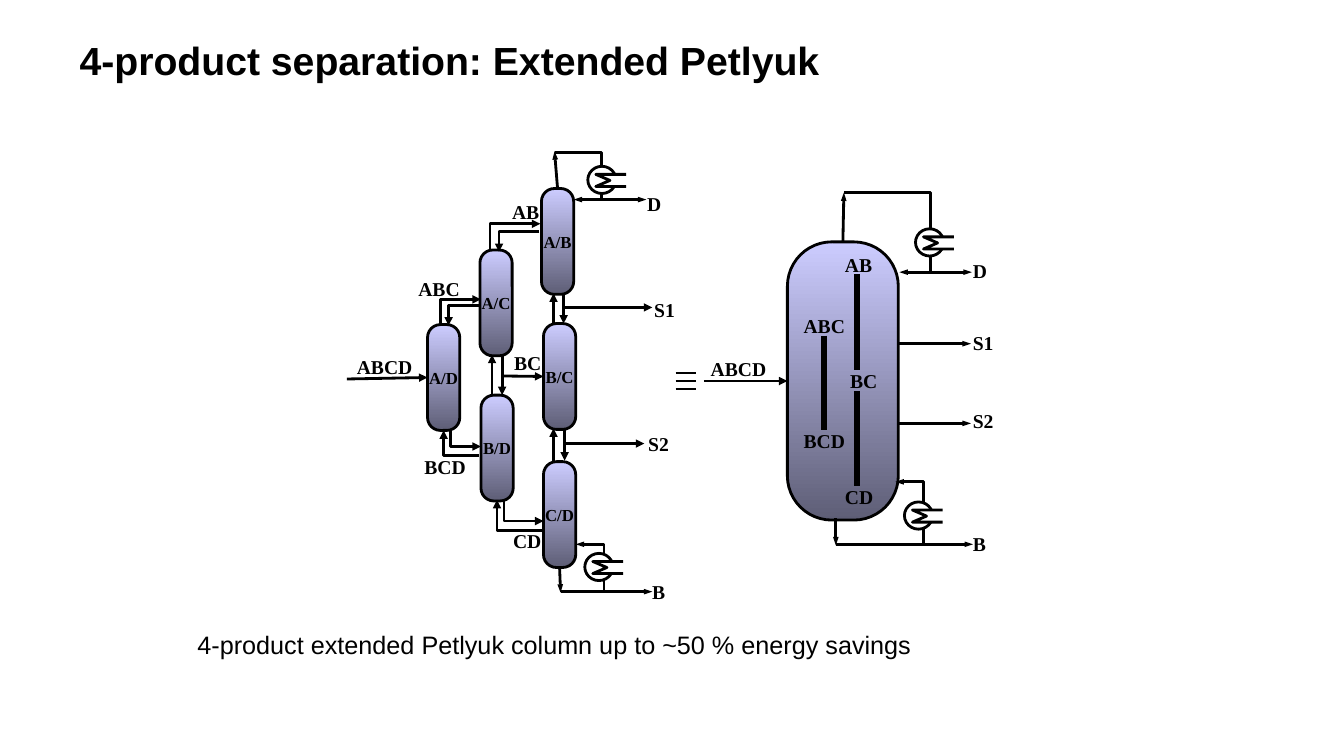
"""Build the slide on the extended Petlyuk column for four products."""
from lxml import etree
from pptx import Presentation
from pptx import util as u
from pptx.dml import color
from pptx.enum import shapes, text
from pptx.oxml import ns

COLORS = {"ink": "000000", "paper": "FFFFFF", "top": "CCCCFF", "bottom": "5E5E76"}
SERIF, SANS = "Times New Roman", "Arial"
COLUMN_SIZE = (0.32, 1.05)

COLUMNS = {
    "A/B": (5.37, 1.87), "B/C": (5.39, 3.21), "C/D": (5.39, 4.58),
    "A/C": (4.76, 2.48), "B/D": (4.77, 3.92), "A/D": (4.24, 3.22),
}
LABELS = [
    ("ABCD", 3.44, 3.47), ("ABC", 4.05, 2.7), ("BCD", 4.11, 4.46),
    ("AB", 4.98, 1.93), ("BC", 5, 3.43), ("CD", 4.99, 5.2),
    ("D", 6.32, 1.85), ("S1", 6.39, 2.91), ("S2", 6.33, 4.24), ("B", 6.37, 5.7),
    ("ABCD", 6.95, 3.49), ("D", 9.55, 2.52), ("S1", 9.55, 3.23),
    ("S2", 9.55, 4.01), ("B", 9.55, 5.23),
]
WALL_LABELS = [
    ("ABC", 7.85, 3.07), ("BCD", 7.85, 4.21), ("AB", 8.12, 2.46),
    ("CD", 8.13, 4.76), ("BC", 8.17, 3.61),
]
ELBOWS = [
    ((4.77, 2.97), (4.37, 3.22), "head"), ((4.75, 3.03), (4.45, 3.23), "tail"),
    ((4.77, 4.43), (4.47, 4.28), "head"), ((4.75, 4.52), (4.4, 4.27), "tail"),
    ((5.36, 2.22), (4.86, 2.47), "head"), ((5.35, 2.3), (4.95, 2.5), "tail"),
    ((5.39, 5.17), (5, 4.97), "head"), ((5.39, 5.26), (4.93, 4.96), "tail"),
]
EXCHANGES = [(4.88, 4.98, 3.52, 3.92), (5.49, 5.59, 2.91, 3.21), (5.49, 5.6, 4.25, 4.57)]
SIDE_DRAWS = [((5.59, 3.05), (6.47, 3.05)), ((5.59, 4.4), (6.39, 4.4))]
WALLS = [(8.17, 3.33, 4.27), (8.5, 3.88, 4.82), (8.5, 2.72, 3.67)]


def rgb(name):
    """Return the named colour."""
    return color.RGBColor.from_string(COLORS[name])


def style_line(shape, arrows=(), width=2, slim=False):
    """Give a black outline with triangles at the listed ends."""
    shape.line.color.rgb = rgb("ink")
    shape.line.width = u.Pt(width)
    line = shape.line._get_or_add_ln()
    for end in ("head", "tail"):
        if end in arrows:
            arrow = etree.SubElement(line, ns.qn(f"a:{end}End"), type="triangle")
            if slim:
                arrow.set("w", "sm")


def add_line(group, start, end, arrows=("tail",), width=2, slim=False,
             kind=shapes.MSO_CONNECTOR.STRAIGHT):
    """Add a connector between two points."""
    points = [u.Inches(value) for value in (*start, *end)]
    connector = group.shapes.add_connector(kind, *points)
    style_line(connector, arrows, width, slim)
    etree.SubElement(connector._element.spPr, ns.qn("a:effectLst"))
    return connector


def add_elbow(group, start, end, arrow):
    """Add a one-bend connector that leaves its start horizontally."""
    connector = add_line(group, start, end, (arrow,), kind=shapes.MSO_CONNECTOR.ELBOW)
    geometry = connector._element.spPr.find(ns.qn("a:prstGeom"))
    geometry.set("prst", "bentConnector2")


def add_polyline(group, points, arrows=(), filled=False):
    """Add an open outline through the points."""
    corners = [(u.Inches(x), u.Inches(y)) for x, y in points]
    builder = group.shapes.build_freeform(*corners[0])
    builder.add_line_segments(corners[1:], close=False)
    shape = builder.convert_to_shape()
    shape.shadow.inherit = False
    if filled:
        shape.fill.solid()
        shape.fill.fore_color.rgb = rgb("paper")
    else:
        shape.fill.background()
    style_line(shape, arrows, slim=True)


def add_run(paragraph, words, size, font=SERIF, bold=True):
    """Add one styled run."""
    run = paragraph.add_run()
    run.text = words
    run.font.size = u.Pt(size)
    run.font.name = font
    run.font.bold = bold
    run.font.color.rgb = rgb("ink")


def add_label(parent, words, x, y, width=0.79, height=0.33, size=14,
              font=SERIF, bold=True, align=text.PP_ALIGN.LEFT):
    """Add a text box and return its frame."""
    box = parent.shapes.add_textbox(*map(u.Inches, (x, y, width, height)))
    frame = box.text_frame
    frame.word_wrap = True
    frame.paragraphs[0].alignment = align
    add_run(frame.paragraphs[0], words, size, font, bold)
    return frame


def add_column(group, x, y, width, height, words=""):
    """Add a shaded column with an optional name."""
    shape = group.shapes.add_shape(
        shapes.MSO_SHAPE.ROUNDED_RECTANGLE, *map(u.Inches, (x, y, width, height)))
    shape.adjustments[0] = 0.4
    shape.shadow.inherit = False
    shape.fill.gradient()
    shape.fill.gradient_angle = 270
    for stop, name in zip(shape.fill.gradient_stops, ("top", "bottom")):
        stop.color.rgb = rgb(name)
    style_line(shape)
    if words:
        frame = shape.text_frame
        frame.word_wrap = False
        frame.vertical_anchor = text.MSO_ANCHOR.MIDDLE
        frame.paragraphs[0].alignment = text.PP_ALIGN.CENTER
        add_run(frame.paragraphs[0], words, 12)
    return shape


def add_exchanger(group, x, y):
    """Add a heat exchanger: a circle with a coil."""
    circle = group.shapes.add_shape(
        shapes.MSO_SHAPE.OVAL, *map(u.Inches, (x, y, 0.28, 0.27)))
    circle.shadow.inherit = False
    circle.fill.solid()
    circle.fill.fore_color.rgb = rgb("paper")
    style_line(circle)
    coil = [(0.38, 0.2), (0.08, 0.2), (0.22, 0.14), (0.08, 0.08), (0.38, 0.08)]
    add_polyline(group, [(x + dx, y + dy) for dx, dy in coil], filled=True)


def add_sequence(group):
    """Add the arrangement of six linked columns."""
    columns = {name: add_column(group, *place, *COLUMN_SIZE, name)
               for name, place in COLUMNS.items()}
    for start, end, arrow in ELBOWS:
        add_elbow(group, start, end, arrow)
    for up, down, top, bottom in EXCHANGES:
        add_line(group, (up, top), (up, bottom), ("head",))
        add_line(group, (down, top), (down, bottom))
    for start, end in SIDE_DRAWS:
        add_line(group, start, end)
    add_line(group, (3.44, 3.76), (4.24, 3.76)).end_connect(columns["A/D"], 1)
    add_line(group, (4.98, 3.73), (5.39, 3.73)).end_connect(columns["B/C"], 1)

    add_line(group, (5.53, 1.87), (5.5, 1.5), slim=True).begin_connect(columns["A/B"], 0)
    add_polyline(group, [(5.5, 1.51), (5.97, 1.51), (5.97, 1.98)])
    add_line(group, (5.69, 1.98), (6.41, 1.98), ("head", "tail"), slim=True)
    add_exchanger(group, 5.83, 1.65)

    add_line(group, (5.55, 5.63), (5.56, 5.88), slim=True).begin_connect(columns["C/D"], 2)
    add_line(group, (5.56, 5.87), (6.47, 5.87), slim=True)
    add_polyline(group, [(5.99, 5.86), (5.99, 5.4), (5.71, 5.4)], ("tail",))
    add_exchanger(group, 5.8, 5.49)


def add_vessel(group):
    """Add the equivalent single vessel with dividing walls."""
    vessel = add_column(group, 7.81, 2.4, 1.1, 2.76)
    add_line(group, (6.98, 3.78), (7.81, 3.78)).end_connect(vessel, 1)
    for x, top, bottom in WALLS:
        add_line(group, (x, top), (x, bottom), (), 4)
    for y in (3.41, 4.2):
        add_line(group, (8.91, y), (9.63, y), slim=True)

    add_line(group, (8.36, 2.4), (8.37, 1.91), slim=True).begin_connect(vessel, 0)
    add_polyline(group, [(8.37, 1.91), (9.23, 1.91), (9.23, 2.7)])
    add_line(group, (8.92, 2.7), (9.64, 2.7), ("head", "tail"), slim=True)
    add_exchanger(group, 9.08, 2.27)

    add_line(group, (8.29, 5.14), (8.29, 5.41), slim=True)
    add_line(group, (8.29, 5.4), (9.65, 5.4), slim=True)
    add_polyline(group, [(9.16, 5.39), (9.16, 4.78), (8.88, 4.78)], ("tail",))
    add_exchanger(group, 8.97, 4.98)


def main():
    """Build and save the slide."""
    presentation = Presentation()
    presentation.slide_width = u.Inches(13.33)
    presentation.slide_height = u.Inches(7.5)
    slide = presentation.slides.add_slide(presentation.slide_layouts[6])

    title = add_label(slide, "4-product separation: Extended Petlyuk",
                      0.79, 0.36, 11.33, 0.47, 28, SANS)
    title.margin_left = title.margin_right = title.margin_top = title.margin_bottom = 0
    title.vertical_anchor = text.MSO_ANCHOR.MIDDLE

    group = slide.shapes.add_group_shape()
    add_sequence(group)
    add_vessel(group)
    for row in range(3):
        y = 3.7 + 0.08 * row
        add_line(group, (6.7, y), (6.9, y), ())
    for words, x, y in LABELS:
        add_label(group, words, x, y)
    for words, x, y in WALL_LABELS:
        add_label(group, words, x, y, 0.63, align=text.PP_ALIGN.RIGHT)

    add_label(slide, "4-product extended Petlyuk column up to ~50 % energy savings",
              1.86, 6.19, 7.64, 0.85, 18, SANS, False)
    presentation.save("out.pptx")


if __name__ == "__main__":
    main()
